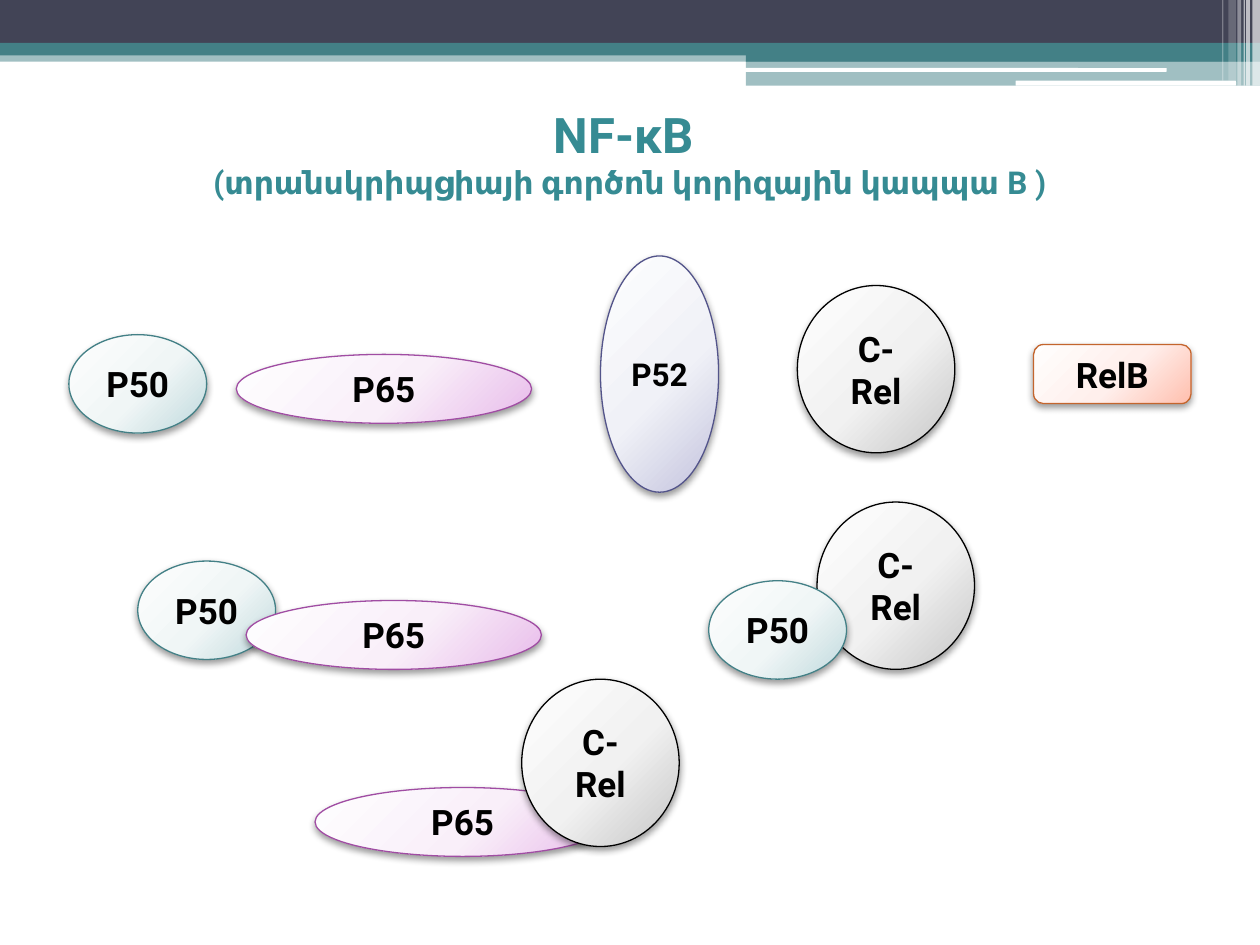
import dataclasses

import pptx
import pptx.dml.color
import pptx.enum.shapes
import pptx.enum.text
import pptx.oxml
import pptx.oxml.ns
import pptx.util
from lxml import etree

Shape = pptx.enum.shapes.MSO_SHAPE
Inches = pptx.util.Inches
Pt = pptx.util.Pt

FONT = "Roboto"
CELL = 10 / 64  # the slide is a grid of 64 columns by 48 rows
COLOURS = {
    "navy": "424456",
    "teal": "438086",
    "title": "368B93",
    "white": "FFFFFF",
    "black": "000000",
    "plum": "A04DA3",
    "indigo": "53548A",
    "rust": "C4652D",
}


@dataclasses.dataclass(frozen=True)
class Bar:
    """Part of the header, in inches, with opacity in percent."""
    left: float
    top: float
    width: float
    height: float
    colour: str
    opacity: int = 100
    kind: int = Shape.RECTANGLE


@dataclasses.dataclass(frozen=True)
class Protein:
    """Size in grid cells; gradient runs from light to dark."""
    label: str
    columns: float
    rows: float
    line: str
    gradient: tuple[str, str, str]
    size: int = 20
    kind: int = Shape.OVAL


P50 = Protein("P50", 7, 5, "teal", ("FEFEFE", "F0F6F6", "BFD9DD"))
P65 = Protein("P65", 15, 3.5, "plum", ("FEFEFF", "F9EFF9", "E8BBEA"))
P52 = Protein("P52", 6, 12, "indigo", ("FEFEFE", "F0F1F7", "C2C2DD"), size=18)
C_REL = Protein("C-Rel", 8, 8.5, "black", ("FEFEFE", "F1F1F1", "C5C5C5"))
REL_B = Protein("RelB", 8, 3, "rust", ("FFFEFD", "FFEFEC", "FFBFAE"),
                kind=Shape.ROUNDED_RECTANGLE)

# Protein, column and row of its top left corner, from back to front
PLACEMENTS = [
    (P50, 3.5, 17), (P65, 12, 18), (P52, 30.5, 13), (REL_B, 52.5, 17.5), (C_REL, 40.5, 14.5),
    (P50, 7, 28.5), (P65, 12.5, 30.5),
    (C_REL, 41.5, 25.5), (P50, 36, 29.5),
    (P65, 16, 40), (C_REL, 26.5, 34.5),
]

BARS = [
    Bar(0, 0.4, 10, 0.09, "teal", 50),
    Bar(0, 0, 10, 0.34, "navy"),
    Bar(0, 0.34, 10, 0.1, "teal"),
    Bar(5.92, 0.39, 4.08, 0.1, "teal"),
    Bar(5.92, 0.48, 4.08, 0.2, "teal", 50),
    Bar(5.91, 0.54, 3.35, 0.03, "white", kind=Shape.ROUNDED_RECTANGLE),
    Bar(8.06, 0.64, 1.75, 0.04, "white", kind=Shape.ROUNDED_RECTANGLE),
] + [
    Bar(left, 0, width, height, "white", opacity)
    for left, width, height, opacity in [
        (9.94, 0.06, 0.68, 65), (9.89, 0.03, 0.68, 65), (9.87, 0.01, 0.68, 60),
        (9.82, 0.03, 0.68, 40), (9.75, 0.06, 0.64, 20), (9.7, 0.01, 0.64, 30),
    ]
]


def rgb(name: str) -> pptx.dml.color.RGBColor:
    return pptx.dml.color.RGBColor.from_string(COLOURS[name])


def write(paragraph, text: str, size: int, colour: str) -> None:
    paragraph.alignment = pptx.enum.text.PP_ALIGN.CENTER
    span = paragraph.add_run()
    span.text = text
    for name, value in {"name": FONT, "size": Pt(size), "bold": True}.items():
        setattr(span.font, name, value)
    span.font.color.rgb = rgb(colour)


def draw_bar(page, bar: Bar) -> None:
    shape = page.shapes.add_shape(
        bar.kind, *map(Inches, (bar.left, bar.top, bar.width, bar.height)))
    shape.shadow.inherit = False
    shape.line.fill.background()
    shape.fill.solid()
    shape.fill.fore_color.rgb = rgb(bar.colour)
    if bar.opacity < 100:
        colour = shape.fill._xPr.find(".//" + pptx.oxml.ns.qn("a:srgbClr"))
        etree.SubElement(colour, pptx.oxml.ns.qn("a:alpha"), val=str(bar.opacity * 1000))


def add_glow_and_shadow(shape, gradient: tuple[str, str, str]) -> None:
    """Fill from the top left corner and drop a soft shadow below."""
    namespace = pptx.oxml.ns.nsdecls("a")
    stops = "".join(
        f'<a:gs pos="{share * 1000}"><a:srgbClr val="{colour}"/></a:gs>'
        for share, colour in zip((0, 55, 100), gradient))
    fill = pptx.oxml.parse_xml(
        f'<a:gradFill {namespace} rotWithShape="1"><a:gsLst>{stops}</a:gsLst>'
        '<a:path path="circle"><a:fillToRect l="-40000" t="-90000" r="140000" b="190000"/>'
        '</a:path></a:gradFill>')
    shadow = pptx.oxml.parse_xml(
        f'<a:outerShdw {namespace} blurRad="{Pt(4.1)}" dist="{Pt(2)}" dir="5400000"'
        ' rotWithShape="0"><a:srgbClr val="000000"><a:alpha val="40000"/></a:srgbClr>'
        '</a:outerShdw>')
    properties = shape._element.spPr
    properties.find(pptx.oxml.ns.qn("a:prstGeom")).addnext(fill)
    properties.find(pptx.oxml.ns.qn("a:effectLst")).append(shadow)


def draw_protein(page, protein: Protein, column: float, row: float) -> None:
    cells = (column, row, protein.columns, protein.rows)
    shape = page.shapes.add_shape(protein.kind, *(Inches(CELL * count) for count in cells))
    shape.shadow.inherit = False
    shape.line.color.rgb = rgb(protein.line)
    shape.line.width = Pt(0.75)
    add_glow_and_shadow(shape, protein.gradient)
    shape.text_frame.word_wrap = True
    shape.text_frame.vertical_anchor = pptx.enum.text.MSO_ANCHOR.MIDDLE
    write(shape.text_frame.paragraphs[0], protein.label, protein.size, "black")


def draw_title(page) -> None:
    box = page.shapes.add_textbox(0, Inches(0.78), Inches(10), Inches(0.88))
    frame = box.text_frame
    frame.word_wrap = True
    frame.auto_size = pptx.enum.text.MSO_AUTO_SIZE.SHAPE_TO_FIT_TEXT
    write(frame.paragraphs[0], "NF-κB ", 28, "title")
    write(frame.add_paragraph(), "(տրանսկրիպցիայի գործոն կորիզային կապպա B )", 18, "title")


def main() -> None:
    deck = pptx.Presentation()
    deck.slide_width, deck.slide_height = Inches(10), Inches(7.5)
    page = deck.slides.add_slide(deck.slide_layouts[6])
    for bar in BARS:
        draw_bar(page, bar)
    draw_title(page)
    for protein, column, row in PLACEMENTS:
        draw_protein(page, protein, column, row)
    deck.save("out.pptx")


if __name__ == "__main__":
    main()
